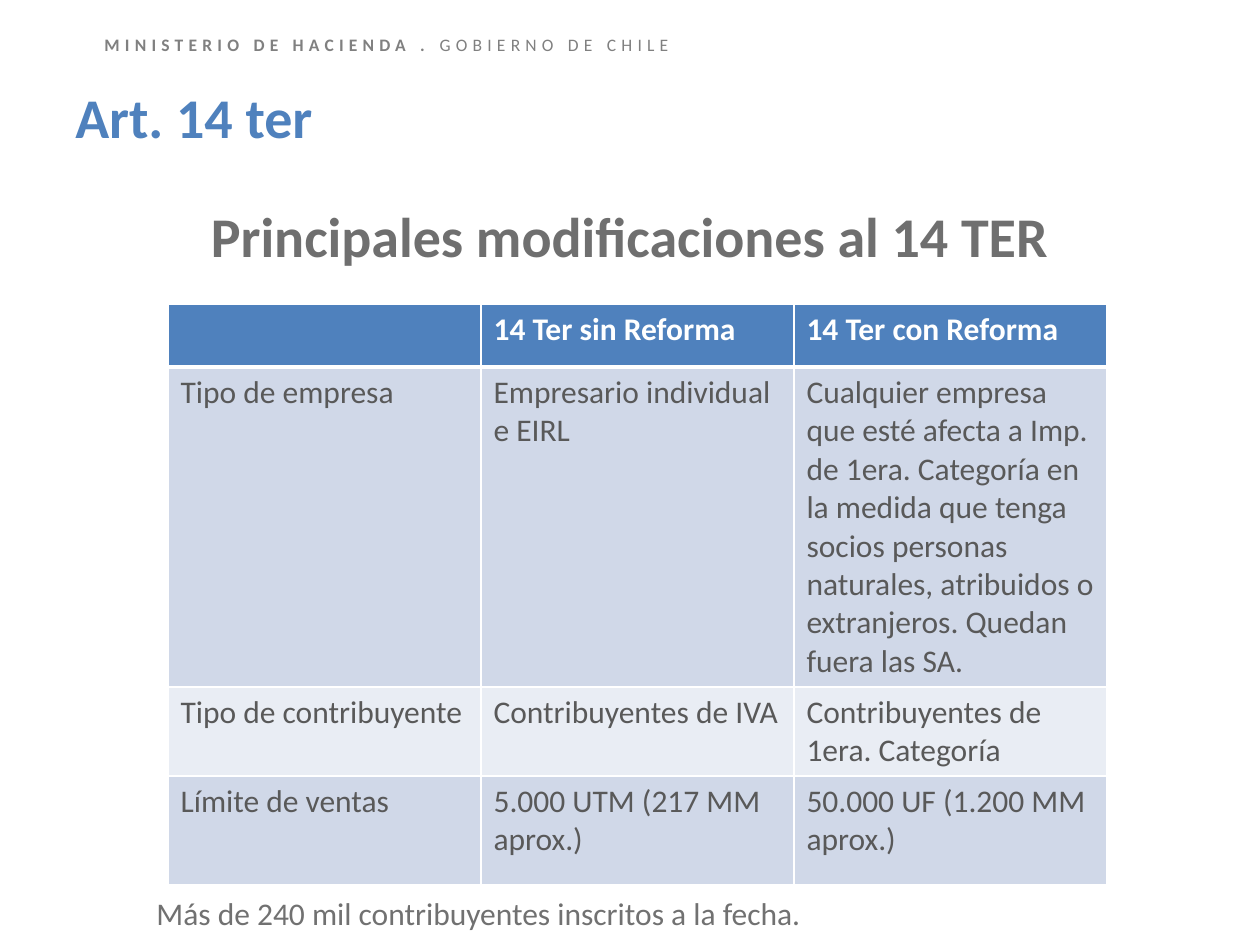
from lxml import etree
from pptx import Presentation
from pptx.dml.color import RGBColor
from pptx.enum.text import MSO_ANCHOR, PP_ALIGN
from pptx.oxml.ns import qn
from pptx.util import Emu, Pt

TOP = MSO_ANCHOR.TOP
LEFT, CENTER = PP_ALIGN.LEFT, PP_ALIGN.CENTER
PX = 914400 // 126
WHITE, BLUE, GREY = "FFFFFF", "4F81BD", "595959"
BANDS = ["D0D8E8", "E9EDF4"]

HEADER = {
    "box": (92, 28, 881, 34),
    "runs": [("MINISTERIO DE HACIENDA . ", True), ("GOBIERNO DE CHILE", False)],
    "size": 10, "color": "808080", "spacing": 3,
}
TITLE = {
    "box": (63, 76, 1134, 100),
    "runs": [("Art. 14 ter", True)],
    "size": 32, "color": BLUE,
}
SUBTITLE = {
    "box": (63, 195, 1134, 665),
    "runs": [("Principales modificaciones al 14 TER", True)],
    "size": 32, "color": "6F6F6F", "align": CENTER,
}
NOTE = {
    "box": (144, 888, 684, 50),
    "runs": [("Más de 240 mil contribuyentes inscritos a la fecha.", False)],
    "size": 18, "color": "717171", "wrap": False,
}
ROWS = [
    ("", "14 Ter sin Reforma", "14 Ter con Reforma"),
    ("Tipo de empresa", "Empresario individual e EIRL",
     "Cualquier empresa que esté afecta a Imp. de 1era. Categoría en la medida "
     "que tenga socios personas naturales, atribuidos o extranjeros. "
     "Quedan fuera las SA."),
    ("Tipo de contribuyente", "Contribuyentes de IVA",
     "Contribuyentes de 1era. Categoría"),
    ("Límite de ventas", "5.000 UTM (217 MM aprox.)",
     "50.000 UF (1.200 MM aprox.)"),
]
TABLE_LEFT, TABLE_TOP, COL_WIDTH = 168, 304, 313
ROW_HEIGHTS = [63, 320, 89, 109]


def px(*values):
    return [Emu(v * PX) for v in values]


def rgb(color):
    return RGBColor.from_string(color)


def add_run(p, text, size, color, bold):
    r = p.add_run()
    r.text = text
    for name, value in {"name": "Calibri", "size": Pt(size), "bold": bold}.items():
        setattr(r.font, name, value)
    r.font.color.rgb = rgb(color)
    return r


def add_text(s, item):
    tf = s.shapes.add_textbox(*px(*item["box"])).text_frame
    tf.word_wrap = item.get("wrap", True)
    tf.vertical_anchor = TOP
    p = tf.paragraphs[0]
    p.alignment = item.get("align", LEFT)
    for text, bold in item["runs"]:
        r = add_run(p, text, item["size"], item["color"], bold)
        if "spacing" in item:
            r.font._element.set("spc", str(item["spacing"] * 100))


def add_borders(cell, widths):
    tc_pr = cell._tc.get_or_add_tcPr()
    for side, width in widths.items():
        ln = etree.SubElement(tc_pr, qn(f"a:ln{side}"), w=str(Pt(width)))
        fill = etree.SubElement(ln, qn("a:solidFill"))
        etree.SubElement(fill, qn("a:srgbClr"), val=WHITE)


def add_table(s):
    box = px(TABLE_LEFT, TABLE_TOP, COL_WIDTH * len(ROWS[0]), sum(ROW_HEIGHTS))
    table = s.shapes.add_table(len(ROWS), len(ROWS[0]), *box).table
    for column in table.columns:
        column.width = Emu(COL_WIDTH * PX)
    for i, (texts, height) in enumerate(zip(ROWS, ROW_HEIGHTS)):
        table.rows[i].height = Emu(height * PX)
        header = i == 0
        widths = {"L": 1, "R": 1, "T": 3 if i == 1 else 1, "B": 3 if header else 1}
        for j, text in enumerate(texts):
            cell = table.cell(i, j)
            add_borders(cell, widths)
            cell.fill.solid()
            cell.fill.fore_color.rgb = rgb(BLUE if header else BANDS[(i - 1) % 2])
            if text:
                p = cell.text_frame.paragraphs[0]
                add_run(p, text, 18, WHITE if header else GREY, header)


def main():
    prs = Presentation()
    prs.slide_width, prs.slide_height = px(1260, 945)
    s = prs.slides.add_slide(prs.slide_layouts[6])
    add_text(s, HEADER)
    add_text(s, TITLE)
    add_table(s)
    add_text(s, SUBTITLE)
    add_text(s, NOTE)
    prs.save("out.pptx")


if __name__ == "__main__":
    main()
